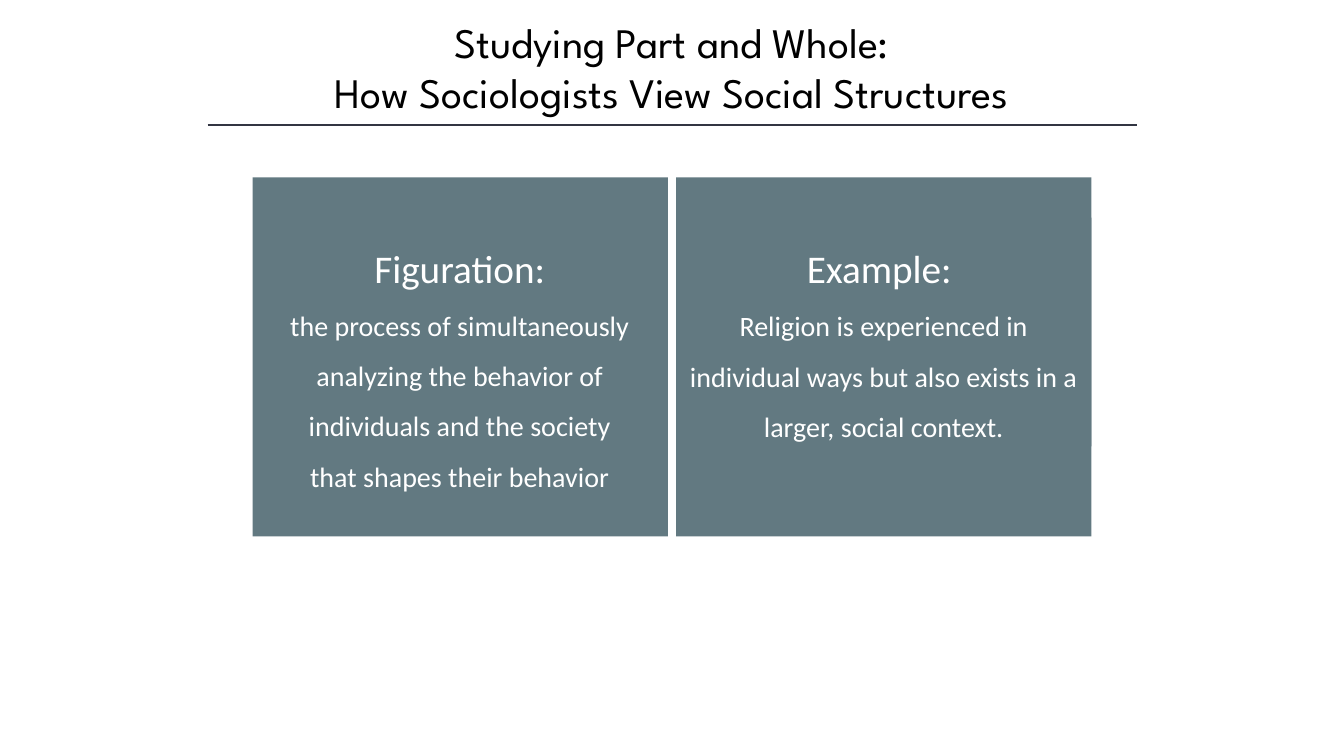
from dataclasses import dataclass

from lxml import etree
from pptx import Presentation
from pptx import util as u
from pptx.dml.color import RGBColor
from pptx.enum import shapes, text
from pptx.oxml.ns import qn


@dataclass(frozen=True)
class Theme:
    ink: str = "000000"
    rule: str = "323542"
    card: str = "627981"
    card_ink: str = "FFFFFF"
    title_font: str = "League Spartan"
    body_font: str = "Calibri"
    title_size: int = 30
    heading_size: int = 28
    body_size: int = 20


THEME = Theme()
WIDTH, HEIGHT = u.Inches(13.33), u.Inches(7.5)

# Shares of the slide's size, in percent
CARD_W, CARD_GAP = 30.9, 0.6
CARD_TOP, CARD_H = 23.47, 47.47
CARD_LEFTS = (50 - CARD_GAP / 2 - CARD_W, 50 + CARD_GAP / 2)


def x(share):
    return round(WIDTH * share / 100)


def y(share):
    return round(HEIGHT * share / 100)


def add_run(p, words, size, font, color):
    r = p.add_run()
    r.text = words
    r.font.size = u.Pt(size)
    r.font.name = font
    r.font.color.rgb = RGBColor.from_string(color)


def add_title(s, lines):
    sp = s.shapes.add_textbox(x(12.5), y(1.47), x(75), y(14.8))
    tf = sp.text_frame
    tf.word_wrap = True
    tf.auto_size = text.MSO_AUTO_SIZE.SHAPE_TO_FIT_TEXT
    p = tf.paragraphs[0]
    p.alignment = text.PP_ALIGN.CENTER
    for i, line in enumerate(lines):
        if i:
            p.add_line_break()
        add_run(p, line, THEME.title_size, THEME.title_font, THEME.ink)


def add_rule(s, left, right, top):
    line = s.shapes.add_connector(
        shapes.MSO_CONNECTOR.STRAIGHT, x(left), y(top), x(right), y(top))
    line.line.color.rgb = RGBColor.from_string(THEME.rule)
    line.line.width = u.Pt(1)
    etree.SubElement(line._element.spPr, qn("a:effectLst"))


def add_panel(s, left, top, width, height):
    sp = s.shapes.add_shape(
        shapes.MSO_SHAPE.RECTANGLE, x(left), y(top), x(width), y(height))
    sp.shadow.inherit = False
    sp.fill.solid()
    sp.fill.fore_color.rgb = RGBColor.from_string(THEME.card)
    sp.line.fill.background()
    return sp


def add_card_text(s, box, heading, body):
    tf = add_panel(s, *box).text_frame
    tf.word_wrap = True
    tf.auto_size = text.MSO_AUTO_SIZE.SHAPE_TO_FIT_TEXT
    tf.vertical_anchor = text.MSO_ANCHOR.MIDDLE
    parts = ((heading, THEME.heading_size), (body, THEME.body_size))
    for i, (words, size) in enumerate(parts):
        p = tf.add_paragraph() if i else tf.paragraphs[0]
        p.alignment = text.PP_ALIGN.CENTER
        p.line_spacing = 1.5
        add_run(p, words, size, THEME.body_font, THEME.card_ink)


def main():
    prs = Presentation()
    prs.slide_width, prs.slide_height = WIDTH, HEIGHT
    s = prs.slides.add_slide(prs.slide_layouts[6])

    # Title and rule
    add_title(s, ("Studying Part and Whole:",
                  "How Sociologists View Social Structures"))
    add_rule(s, 15.45, 84.62, 16.53)

    # Card backgrounds
    for left in CARD_LEFTS:
        add_panel(s, left, CARD_TOP, CARD_W, CARD_H)

    # Card texts
    add_card_text(
        s, (20.33, 28.67, 27.75, 37.07), "Figuration:",
        "the process of simultaneously analyzing the behavior of "
        "individuals and the society that shapes their behavior")
    add_card_text(
        s, (CARD_LEFTS[1], 28.8, CARD_W, 30.27), "Example: ",
        "Religion is experienced in individual ways but also exists "
        "in a larger, social context.")

    prs.save("out.pptx")


if __name__ == "__main__":
    main()
